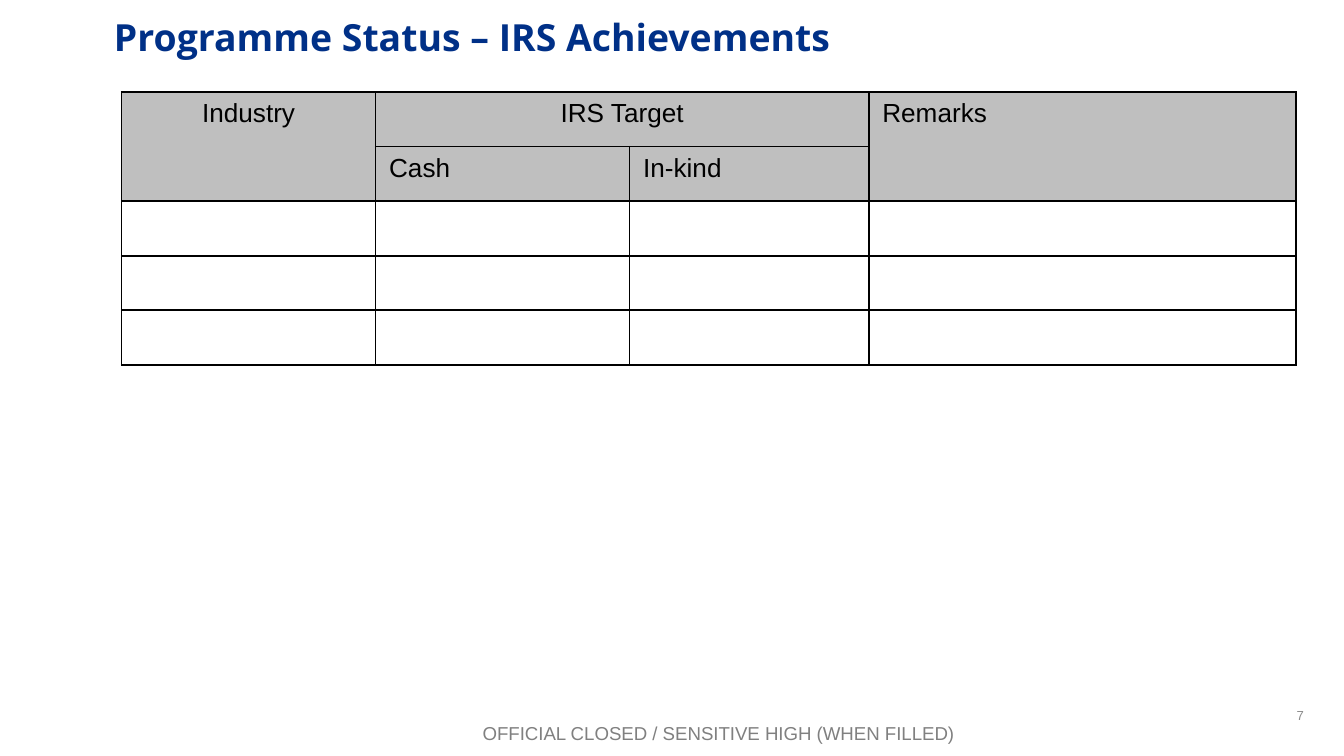
from typing import NamedTuple

from lxml.etree import SubElement
from pptx import Presentation
from pptx.dml.color import RGBColor
from pptx.enum.text import MSO_ANCHOR, PP_ALIGN
from pptx.oxml.ns import qn
from pptx.util import Inches, Pt

WIDE = 10
HIGH = WIDE * 9 / 16
COLS = [1.89, 1.89, 1.78, 3.18]
ROWS, HEAD_ROWS = 5, 2
GRID_HIGH = 2.03
BLACK, GREY = "000000", "BFBFBF"


class Label(NamedTuple):
    text: str
    box: tuple[float, float, float, float]  # percent of the slide
    size: int
    font: str
    color: str
    bold: bool = False
    align: PP_ALIGN = PP_ALIGN.LEFT
    anchor: MSO_ANCHOR = MSO_ANCHOR.TOP


class Head(NamedTuple):
    text: str
    row: int
    col: int
    rows: int = 1
    cols: int = 1
    align: PP_ALIGN = PP_ALIGN.LEFT


LABELS = [
    Label("7", (74.7, 91.9, 23.3, 5.33), 7, "Arial", "8C8C8C",
          align=PP_ALIGN.RIGHT, anchor=MSO_ANCHOR.MIDDLE),
    Label("OFFICIAL CLOSED / SENSITIVE HIGH (WHEN FILLED)",
          (6.8, 94.6, 93.3, 4.8), 10, "Arial", "808080",
          align=PP_ALIGN.CENTER),
    Label("Programme Status – IRS Achievements", (7.5, 1.05, 86.6, 14.05),
          20, "Open Sans", "003087", bold=True),
]

HEADS = [
    Head("Industry", 0, 0, rows=2, align=PP_ALIGN.CENTER),
    Head("IRS Target", 0, 1, cols=2, align=PP_ALIGN.CENTER),
    Head("Remarks", 0, 3, rows=2),
    Head("Cash", 1, 1),
    Head("In-kind", 1, 2),
]


def tint(code: str) -> RGBColor:
    return RGBColor.from_string(code)


def style(part, size: int, name: str, color: str, bold: bool = False) -> None:
    font = part.font
    font.size, font.name, font.bold = Pt(size), name, bold
    font.color.rgb = tint(color)


def add_label(slide, label: Label) -> None:
    left, top, width, height = (share / 100 for share in label.box)
    box = slide.shapes.add_textbox(
        Inches(left * WIDE), Inches(top * HIGH),
        Inches(width * WIDE), Inches(height * HIGH))
    frame = box.text_frame
    frame.word_wrap = True
    frame.vertical_anchor = label.anchor
    frame.text = label.text
    para = frame.paragraphs[0]
    para.alignment = label.align
    style(para.runs[0], label.size, label.font, label.color, label.bold)


def add_edges(cell) -> None:
    # Borders must come before the fill in the cell properties
    props = cell._tc.get_or_add_tcPr()
    for side in ("a:lnL", "a:lnR", "a:lnT", "a:lnB"):
        line = SubElement(props, qn(side), w=str(Pt(1)))
        fill = SubElement(line, qn("a:solidFill"))
        SubElement(fill, qn("a:srgbClr"), val=BLACK)


def add_grid(slide) -> None:
    table = slide.shapes.add_table(
        ROWS, len(COLS), Inches(0.09 * WIDE + 0.005), Inches(0.1218 * HIGH),
        Inches(sum(COLS)), Inches(GRID_HIGH)).table
    for col, width in zip(table.columns, COLS):
        col.width = Inches(width)
    for i, row in enumerate(table.rows):
        row.height = Inches(GRID_HIGH / ROWS)
        for cell in row.cells:
            add_edges(cell)
            if i < HEAD_ROWS:
                cell.fill.solid()
                cell.fill.fore_color.rgb = tint(GREY)
            else:
                cell.fill.background()
                style(cell.text_frame.paragraphs[0], 14, "Arial", BLACK)

    # Header cells, merged where they span
    for head in HEADS:
        cell = table.cell(head.row, head.col)
        if head.rows * head.cols > 1:
            cell.merge(table.cell(head.row + head.rows - 1,
                                  head.col + head.cols - 1))
        cell.text_frame.text = head.text
        para = cell.text_frame.paragraphs[0]
        para.alignment = head.align
        style(para.runs[0], 14, "Arial", BLACK)


def main() -> None:
    deck = Presentation()
    deck.slide_width, deck.slide_height = Inches(WIDE), Inches(HIGH)
    slide = deck.slides.add_slide(deck.slide_layouts[6])
    for label in LABELS:
        add_label(slide, label)
    add_grid(slide)
    deck.save("out.pptx")


if __name__ == "__main__":
    main()
